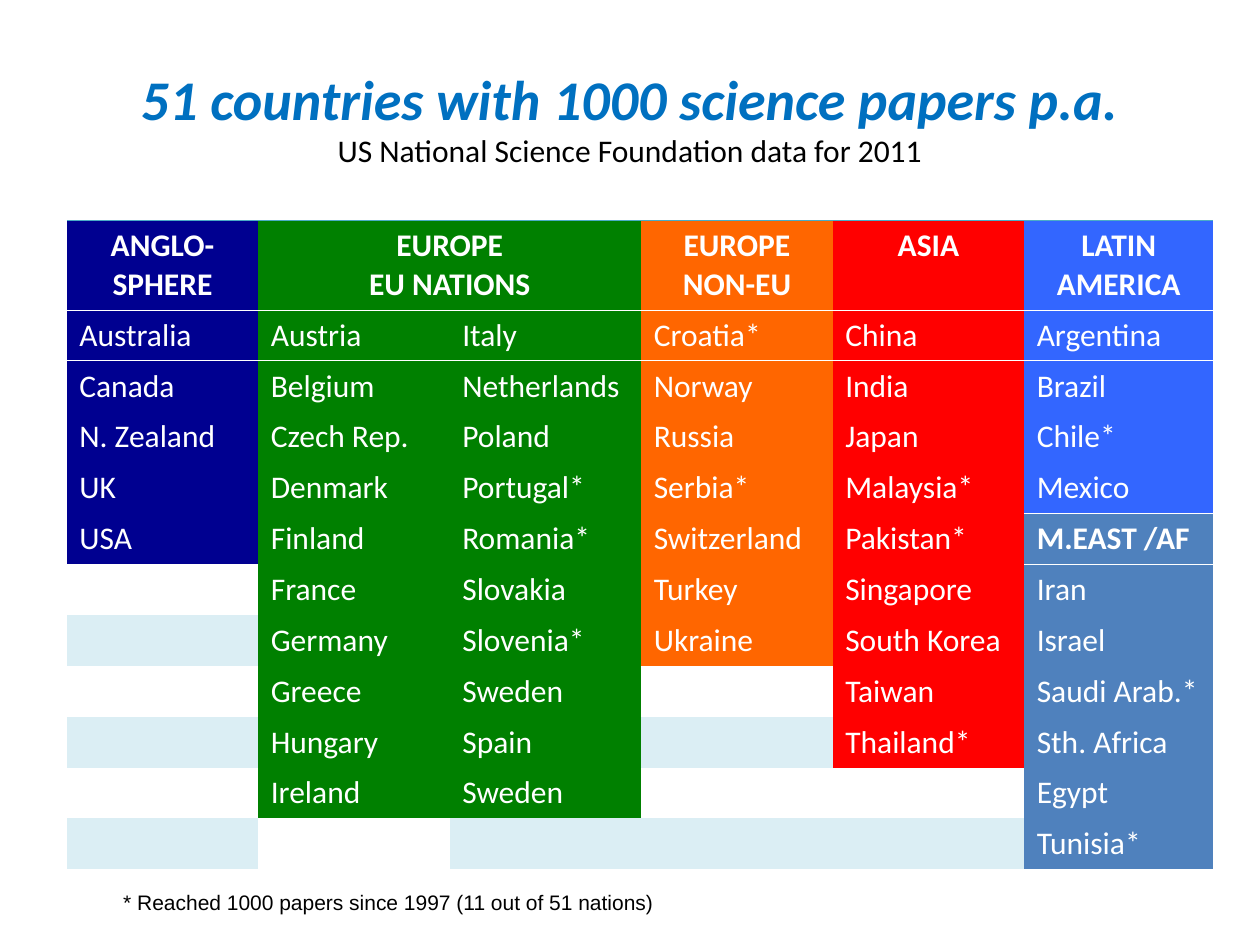
from dataclasses import dataclass

from lxml import etree
from pptx import Presentation
from pptx import util as u
from pptx.dml.color import RGBColor
from pptx.enum import text
from pptx.oxml.ns import qn

WIDE, HIGH = 10, 7.5
COLS, ROWS = 6, 12
LEFT, TOP, HEAD, TALL = 0.53, 1.75, 0.71, 5.15
COL, LAST = 1.52, 1.5
LOW = (TALL - HEAD) / (ROWS - 1)
PLAIN = "{2D5ABB26-0587-4C30-8999-92F81FD0307C}"

HUES = {
    "title": "0070C0", "ink": "000000", "white": "FFFFFF", "edge": "4BACC6",
    "band": "DBEEF4", "navy": "000090", "green": "008000",
    "orange": "FF6600", "red": "FF0000", "blue": "3366FF", "steel": "4F81BD",
}


@dataclass
class Group:
    head: str
    hue: str
    col: int
    lands: str
    row: int = 0
    span: int = 1


GROUPS = [
    Group("ANGLO-SPHERE", "navy", 0, "Australia,Canada,N. Zealand,UK,USA"),
    Group("EUROPE\nEU NATIONS", "green", 1,
          "Austria,Belgium,Czech Rep.,Denmark,Finland,France,Germany,Greece,"
          "Hungary,Ireland,Italy,Netherlands,Poland,Portugal*,Romania*,"
          "Slovakia,Slovenia*,Sweden,Spain,Sweden", span=2),
    Group("EUROPE\nNON-EU", "orange", 3,
          "Croatia*,Norway,Russia,Serbia*,Switzerland,Turkey,Ukraine"),
    Group("ASIA", "red", 4, "China,India,Japan,Malaysia*,Pakistan*,Singapore,"
          "South Korea,Taiwan,Thailand*"),
    Group("LATIN AMERICA", "blue", 5, "Argentina,Brazil,Chile*,Mexico"),
    Group("M.EAST /AF", "steel", 5,
          "Iran,Israel,Saudi Arab.*,Sth. Africa,Egypt,Tunisia*", row=5),
]


def style(run, size: int, hue: str, bold=False, slant=False, face="Calibri") -> None:
    font = run.font
    font.name, font.size, font.bold, font.italic = face, u.Pt(size), bold, slant
    font.color.rgb = RGBColor.from_string(HUES[hue])


def rule(cell, side: str, hue: str, width: float) -> None:
    """Draw one border of a cell; call before the cell is filled."""
    line = etree.SubElement(cell._tc.get_or_add_tcPr(), qn(f"a:ln{side}"),
                            w=str(u.Pt(width)))
    solid = etree.SubElement(line, qn("a:solidFill"))
    etree.SubElement(solid, qn("a:srgbClr"), val=HUES[hue])


def paint(cell, hue: str) -> None:
    cell.fill.solid()
    cell.fill.fore_color.rgb = RGBColor.from_string(HUES[hue])


def write(cell, words: str, hue: str, bold=False, center=False) -> None:
    cell.text_frame.text = words
    for para in cell.text_frame.paragraphs:
        if center:
            para.alignment = text.PP_ALIGN.CENTER
        for run in para.runs:
            style(run, 18, "white", bold)
    paint(cell, hue)


def fill_group(table, group: Group) -> None:
    top = group.row == 0
    head = table.cell(group.row, group.col)
    if group.span > 1:
        head.merge(table.cell(group.row, group.col + group.span - 1))
    write(head, group.head, group.hue, bold=True, center=top)
    lands = group.lands.split(",")
    deep = len(lands) // group.span
    for i, land in enumerate(lands):
        cell = table.cell(group.row + 1 + i % deep, group.col + i // deep)
        write(cell, land, group.hue)


def add_table(slide) -> None:
    frame = slide.shapes.add_table(
        ROWS, COLS, u.Inches(LEFT), u.Inches(TOP),
        u.Inches(COL * (COLS - 1) + LAST), u.Inches(TALL))
    table = frame.table
    table.first_row = table.horz_banding = False
    table._tbl.tblPr.find(qn("a:tableStyleId")).text = PLAIN
    for c, col in enumerate(table.columns):
        col.width = u.Inches(LAST if c == COLS - 1 else COL)
    for r, row in enumerate(table.rows):
        row.height = u.Inches(LOW if r else HEAD)
    for c in range(COLS):
        rule(table.cell(0, c), "T", "edge", 1)
        rule(table.cell(0, c), "B", "white", 0.5)
        rule(table.cell(1, c), "T", "white", 0.5)
    rule(table.cell(4, COLS - 1), "B", "white", 0.5)
    rule(table.cell(5, COLS - 1), "T", "white", 0.5)
    for group in GROUPS:
        fill_group(table, group)
    for r in range(7, ROWS, 2):
        for c in range(COLS):
            cell = table.cell(r, c)
            if not cell.text_frame.text and (r, c) != (ROWS - 1, 1):
                paint(cell, "band")


def add_box(slide, words: str, x: float, y: float, w: float, h: float):
    box = slide.shapes.add_textbox(*(u.Inches(v) for v in (x, y, w, h)))
    box.text_frame.word_wrap = True
    box.text_frame.text = words
    return box.text_frame


def main() -> None:
    deck = Presentation()
    deck.slide_width, deck.slide_height = u.Inches(WIDE), u.Inches(HIGH)
    slide = deck.slides.add_slide(deck.slide_layouts[6])

    title = add_box(slide, "51 countries with 1000 science papers p.a.\v"
                    "US National Science Foundation data for 2011",
                    0, HIGH * 0.04, WIDE, 1.25)
    title.vertical_anchor = text.MSO_ANCHOR.MIDDLE
    para = title.paragraphs[0]
    para.alignment = text.PP_ALIGN.CENTER
    main_run, sub_run = para.runs
    style(main_run, 32, "title", bold=True, slant=True)
    style(sub_run, 18, "ink")

    add_table(slide)

    note = add_box(slide, "* Reached 1000 papers since 1997 (11 out of 51 nations)",
                   0.88, 7.01, WIDE * 0.66, HIGH * 0.04)
    style(note.paragraphs[0].runs[0], 12, "ink", face="Arial")
    deck.save("out.pptx")


if __name__ == "__main__":
    main()
